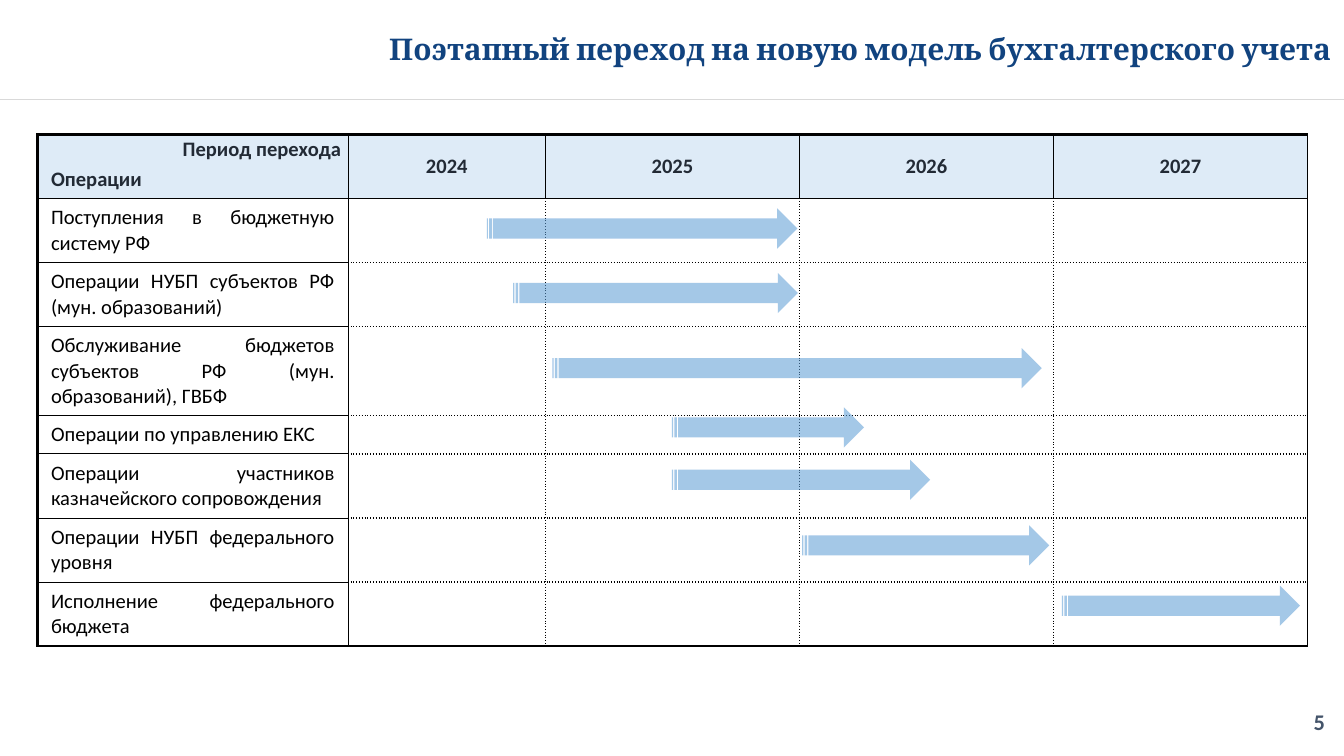
from lxml import etree
from pptx import Presentation
from pptx.dml.color import RGBColor
from pptx.enum import shapes, text
from pptx.oxml.ns import qn
from pptx.util import Cm, Pt

"""Build the slide on the phased move to the new accounting model."""

TITLE = "Поэтапный переход на новую модель бухгалтерского учета"
PERIOD = "Период перехода"
PAGE_NUMBER = "5"
HEADER = ["Операции", "2024", "2025", "2026", "2027"]
OPERATIONS = [
    {"name": "Поступления в бюджетную систему РФ", "lines": 2, "arrow": (9.2, 3.94, 5.87)},
    {"name": "Операции НУБП субъектов РФ (мун. образований)", "lines": 2, "arrow": (9.7, 5.16, 5.38)},
    {"name": "Обслуживание бюджетов субъектов РФ (мун. образований), ГВБФ", "lines": 3,
     "arrow": (10.44, 6.58, 9.25)},
    {"name": "Операции по управлению ЕКС", "lines": 1, "arrow": (12.7, 7.7, 3.63)},
    {"name": "Операции участников казначейского сопровождения", "lines": 2, "arrow": (12.7, 8.69, 4.88)},
    {"name": "Операции НУБП федерального уровня", "lines": 2, "arrow": (15.16, 9.93, 4.67)},
    {"name": "Исполнение федерального бюджета", "lines": 2, "arrow": (20.07, 11.07, 4.5)},
]
COLORS = {"title": "11437F", "header": "222A35", "header_fill": "DEEBF7", "body": "000000",
          "border": "000000", "arrow": "5B9BD5", "rule": "D9D9D9", "number": "44546A"}
COLUMNS = [5.87, 3.73, 4.8, 4.8, 4.8]
ROW_HEIGHTS = {1: 0.73, 2: 1.21, 3: 1.68}
THICK, THIN, DOTTED = (1.5, "solid"), (0.5, "solid"), (0.75, "sysDot")
ALIGN, ANCHOR = text.PP_ALIGN, text.MSO_ANCHOR


def color(name):
    return RGBColor.from_string(COLORS[name])


def write(frame, words, size, tint, align, bold=True, font="Calibri"):
    paragraph = frame.paragraphs[0]
    paragraph.alignment = align
    span = paragraph.add_run()
    span.text = words
    span.font.size, span.font.bold, span.font.name = Pt(size), bold, font
    span.font.color.rgb = color(tint)


def fit(box, left, top, width, height, anchor=ANCHOR.TOP):
    box.left, box.top, box.width, box.height = Cm(left), Cm(top), Cm(width), Cm(height)
    frame = box.text_frame
    frame.word_wrap = True
    frame.auto_size = text.MSO_AUTO_SIZE.SHAPE_TO_FIT_TEXT
    frame.vertical_anchor = anchor
    return frame


def add_text_box(page, *place):
    return fit(page.shapes.add_textbox(0, 0, 0, 0), *place)


def set_borders(cell, row, column, last_row, last_column):
    inner = column > 0 and row > 0
    sides = {
        "L": THICK if column == 0 else DOTTED if inner and column > 1 else THIN,
        "R": DOTTED if inner and column < last_column else THIN,
        "T": THICK if row == 0 else DOTTED if inner and row > 1 else THIN,
        "B": THICK if row == last_row else DOTTED if inner else THIN,
    }
    properties = cell._tc.get_or_add_tcPr()
    for index, (side, (width, dash)) in enumerate(sides.items()):
        line = etree.Element(qn(f"a:ln{side}"), w=str(Pt(width)))
        fill = etree.SubElement(line, qn("a:solidFill"))
        etree.SubElement(fill, qn("a:srgbClr"), val=COLORS["border"])
        etree.SubElement(line, qn("a:prstDash"), val=dash)
        properties.insert(index, line)


def add_schedule(page):
    heights = [ROW_HEIGHTS[count] for count in [2] + [item["lines"] for item in OPERATIONS]]
    rows, columns = len(heights), len(COLUMNS)
    table = page.shapes.add_table(rows, columns, Cm(0.71), Cm(2.54),
                                  Cm(sum(COLUMNS)), Cm(sum(heights))).table
    table.first_row = table.horz_banding = False
    for column, width in zip(table.columns, COLUMNS):
        column.width = Cm(width)
    for row, height in enumerate(heights):
        table.rows[row].height = Cm(height)
        for column in range(columns):
            cell = table.cell(row, column)
            if row == 0:
                cell.fill.solid()
                cell.fill.fore_color.rgb = color("header_fill")
                cell.vertical_anchor = ANCHOR.MIDDLE if column else ANCHOR.BOTTOM
                write(cell.text_frame, HEADER[column], 11, "header",
                      ALIGN.CENTER if column else ALIGN.LEFT)
            else:
                cell.fill.background()
                if column == 0:
                    write(cell.text_frame, OPERATIONS[row - 1]["name"], 11, "body",
                          ALIGN.JUSTIFY, bold=False)
                else:
                    paragraph = cell.text_frame.paragraphs[0]
                    etree.SubElement(paragraph._p, qn("a:endParaRPr"), sz="1100")
            set_borders(cell, row, column, rows - 1, columns - 1)


def add_rule(page, top, width):
    rule = page.shapes.add_connector(shapes.MSO_CONNECTOR.STRAIGHT, 0, Cm(top), width, Cm(top))
    rule.line.color.rgb = color("rule")
    rule.line.width = Pt(1)
    etree.SubElement(rule._element.spPr, qn("a:effectLst"))


def add_arrow(page, left, top, length):
    arrow = page.shapes.add_shape(shapes.MSO_SHAPE.STRIPED_RIGHT_ARROW,
                                  Cm(left), Cm(top), Cm(length), Cm(0.76))
    arrow.shadow.inherit = False
    arrow.line.fill.background()
    arrow.fill.solid()
    arrow.fill.fore_color.rgb = color("arrow")
    tint = arrow._element.spPr.find(".//" + qn("a:srgbClr"))
    etree.SubElement(tint, qn("a:alpha"), val="55000")


def main():
    deck = Presentation()
    deck.slide_width, deck.slide_height = Cm(25.4), Cm(14.29)
    page = deck.slides.add_slide(deck.slide_layouts[5])

    title = fit(page.shapes.title, 7.09, 0.46, 18.34, 0.94)
    title.margin_left = 0
    write(title, TITLE, 16, "title", ALIGN.RIGHT, font="Cambria")
    add_rule(page, 1.88, deck.slide_width)

    add_schedule(page)
    write(add_text_box(page, 3.07, 2.44, 3.63, 0.74), PERIOD, 11, "header", ALIGN.RIGHT)
    for item in OPERATIONS:
        add_arrow(page, *item["arrow"])

    number = add_text_box(page, 19.2, 13.39, 5.84, 0.51, ANCHOR.MIDDLE)
    number.margin_left = number.margin_right = number.margin_top = number.margin_bottom = 0
    write(number, PAGE_NUMBER, 12, "number", ALIGN.RIGHT)

    deck.save("out.pptx")


if __name__ == "__main__":
    main()
